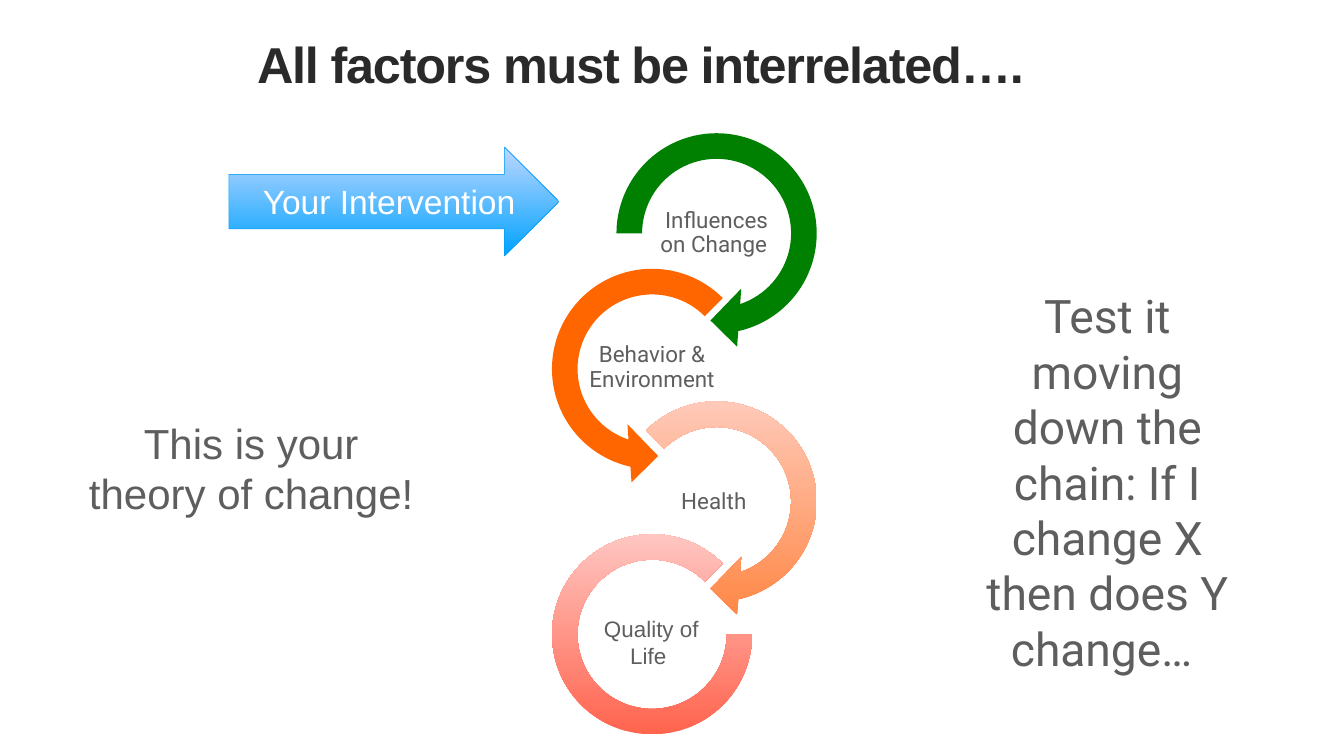
from dataclasses import dataclass

from pptx import Presentation
from pptx.dml.color import RGBColor
from pptx.enum.shapes import MSO_SHAPE
from pptx.enum.text import MSO_ANCHOR, MSO_AUTO_SIZE, PP_ALIGN
from pptx.util import Inches, Pt

CENTER, LEFT = PP_ALIGN.CENTER, PP_ALIGN.LEFT
TOP, MIDDLE = MSO_ANCHOR.TOP, MSO_ANCHOR.MIDDLE
FIXED, GROW = MSO_AUTO_SIZE.NONE, MSO_AUTO_SIZE.SHAPE_TO_FIT_TEXT
RIGHT_TURN, LEFT_TURN = MSO_SHAPE.CIRCULAR_ARROW, MSO_SHAPE.LEFT_CIRCULAR_ARROW
BLOCK_ARC, RIGHT_ARROW = MSO_SHAPE.BLOCK_ARC, MSO_SHAPE.RIGHT_ARROW


@dataclass(frozen=True)
class Theme:
    sans: str = "Arial"
    accent: str = "Roboto"
    title: str = "2A2A2A"
    body: str = "5E5E5E"
    light: str = "FFFFFF"
    arrow_line: str = "009EF9"
    arrow: tuple = ("00A2FF", "BDD7FF")
    influences: tuple = ("008000",)
    behavior: tuple = ("FF6600",)
    health: tuple = ("FF8745", "FFCEC1")
    quality: tuple = ("FF644E", "FFC6C2")
    title_size: int = 72
    test_size: int = 66
    theory_size: int = 60
    arrow_size: int = 48
    label_size: int = 32


THEME = Theme()


def rgb(value):
    return RGBColor.from_string(value)


def place(item, box):
    for side, length in zip(("left", "top", "width", "height"), box):
        setattr(item, side, Inches(length))


def write(holder, text, size, font=THEME.sans, color=THEME.body, bold=False,
          align=CENTER, anchor=TOP, fit=GROW, inset=(0.1, 0.05), spacing=1.0):
    """Fill a text holder with one formatted paragraph."""
    across, down = (Inches(length) for length in inset)
    frame = holder.text_frame
    frame_format = {
        "word_wrap": True, "auto_size": fit, "vertical_anchor": anchor,
        "margin_left": across, "margin_right": across,
        "margin_top": down, "margin_bottom": down,
    }
    for name, value in frame_format.items():
        setattr(frame, name, value)
    paragraph = frame.paragraphs[0]
    paragraph.alignment, paragraph.line_spacing = align, spacing
    run = paragraph.add_run()
    run.text = text
    for name, value in {"name": font, "size": Pt(size), "bold": bold}.items():
        setattr(run.font, name, value)
    run.font.color.rgb = rgb(color)
    return run


def add_text(shapes, box, text, size, **text_format):
    holder = shapes.add_textbox(*map(Inches, box))
    write(holder, text, size, **text_format)


def add_filled(shapes, preset, box, colors, adjustments=()):
    """Add a preset shape; two colours make a gradient from bottom to top."""
    shape = shapes.add_shape(preset, *map(Inches, box))
    shape.shadow.inherit = False
    shape.line.fill.background()
    for index, value in enumerate(adjustments):
        shape.adjustments[index] = value
    if len(colors) == 1:
        shape.fill.solid()
        shape.fill.fore_color.rgb = rgb(colors[0])
    else:
        shape.fill.gradient()
        shape.fill.gradient_angle = 90
        for stop, color in zip(shape.fill.gradient_stops, colors):
            stop.color.rgb = rgb(color)
    return shape


def add_title(slide, box):
    title = slide.shapes.title
    place(title, box)
    run = write(title, "All factors must be interrelated….", THEME.title_size,
                color=THEME.title, bold=True, align=LEFT, fit=FIXED,
                inset=(0.06, 0.06), spacing=0.8)
    run.font._element.set("spc", "-170")


def add_chain(slide, box):
    """Add the column of linked rings; box spans all four."""
    left, top, width, height = box
    ring, arc = 4.62, 3.97
    label_width, label_height, label_pitch = 2.58, 1.29, 2.66
    right = left + width - ring
    links = [
        ("Influences on Change ", RIGHT_TURN, right, 0, THEME.influences, (45, 108)),
        ("Behavior & Environment ", LEFT_TURN, left, 2.69, THEME.behavior, (63, 189)),
        ("Health ", RIGHT_TURN, right, 5.32, THEME.health, (45, 135)),
    ]
    chain = slide.shapes.add_group_shape().shapes
    for index, (label, preset, x, drop, colors, angles) in enumerate(links):
        add_filled(chain, preset, (x, top + drop, ring, ring), colors,
                   (0.11, 11.423, *angles, 0.125))
        label_box = (x + (ring - label_width) / 2, top + 1.67 + index * label_pitch,
                     label_width, label_height)
        add_text(chain, label_box, label, THEME.label_size, font=THEME.accent,
                 anchor=MIDDLE, fit=FIXED, inset=(0.02, 0.02), spacing=0.9)
    arc_left, arc_top = left + (ring - arc) / 2, top + height - arc
    add_filled(chain, BLOCK_ARC, (arc_left, arc_top, arc, arc), THEME.quality,
               (0, 189, 0.127))
    add_text(slide.shapes, (left + 1.1, arc_top + 1.56, 2.39, 1.18),
             "Quality of Life ", THEME.label_size)


def add_intervention(slide, box):
    left, top, width, height = box
    arrow = add_filled(slide.shapes, RIGHT_ARROW, box, THEME.arrow)
    arrow.line.color.rgb = rgb(THEME.arrow_line)
    arrow.line.width = Pt(0.75)
    label_height = 0.91
    label_box = (left + 0.22, top + (height - label_height) / 2, width - 0.44, label_height)
    add_text(slide.shapes, label_box, "Your Intervention ", THEME.arrow_size,
             color=THEME.light)


def add_remark(slide, box, text, size, font):
    add_text(slide.shapes, box, text, size, font=font, anchor=MIDDLE,
             inset=(0.06, 0.06))


def main():
    deck = Presentation()
    deck.slide_width, deck.slide_height = Inches(26.67), Inches(15)
    slide = deck.slides.add_slide(deck.slide_layouts[5])
    add_title(slide, (5.04, 0.83, 16.59, 1.13))
    add_chain(slide, (10.63, 2.32, 5.9, 12.25))
    add_intervention(slide, (4.54, 2.92, 6.55, 2.16))
    add_remark(slide, (1.7, 7.71, 6.57, 3.14), "This is your theory of change! ",
               THEME.theory_size, THEME.sans)
    add_remark(slide, (19.26, 5.61, 5.43, 7.89),
               "Test it moving down the chain: If I change X then does Y change… ",
               THEME.test_size, THEME.accent)
    deck.save("out.pptx")


if __name__ == "__main__":
    main()
